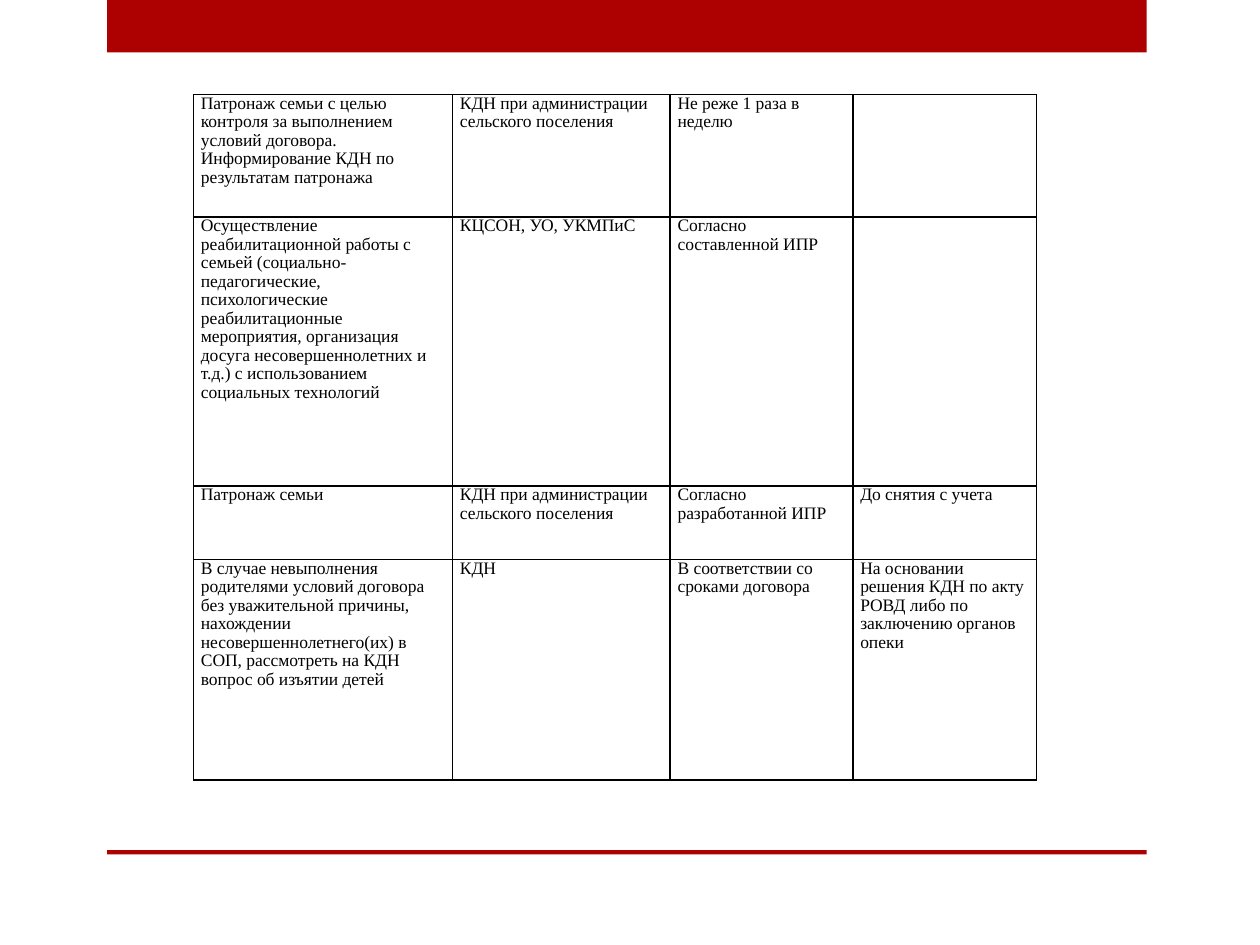
"""Build a slide with a family support plan table between two red bars."""
from lxml import etree
from pptx import Presentation
from pptx.dml.color import RGBColor
from pptx.enum import shapes, text
from pptx.oxml import ns
from pptx.util import Pt


def tint(code):
    """Turn a hex string into a colour."""
    return RGBColor.from_string(code)


def write(frame, words, font="Times New Roman", size=10, color="000000", pitch=0.96):
    """Put formatted text in a frame."""
    para = frame.paragraphs[0]
    para.alignment = text.PP_ALIGN.LEFT
    para.line_spacing = pitch
    run = para.add_run()
    run.text = words
    run.font.name = font
    run.font.size = Pt(size)
    run.font.color.rgb = tint(color)


deck = Presentation()
deck.slide_width, deck.slide_height = Pt(720), Pt(540)
slide = deck.slides.add_slide(deck.slide_layouts[6])

for top, high in [(0, 30), (485.8, 2.4)]:
    bar = slide.shapes.add_shape(
        shapes.MSO_SHAPE.RECTANGLE, Pt(61.2), Pt(top), Pt(594), Pt(high))
    bar.shadow.inherit = False
    bar.fill.solid()
    bar.fill.fore_color.rgb = tint("AD0101")
    bar.line.fill.background()

plan = [
    ["Патронаж семьи с целью контроля за выполнением условий договора. "
     "Информирование КДН по результатам патронажа",
     "КДН при администрации сельского поселения",
     "Не реже 1 раза в неделю", ""],
    ["Осуществление реабилитационной работы с семьей (социально-педагогические, "
     "психологические реабилитационные мероприятия, организация досуга "
     "несовершеннолетних и т.д.) с использованием социальных технологий",
     "КЦСОН, УО, УКМПиС",
     "Согласно составленной ИПР", ""],
    ["Патронаж семьи",
     "КДН при администрации сельского поселения",
     "Согласно разработанной ИПР",
     "До снятия с учета"],
    ["В случае невыполнения родителями условий договора без уважительной причины, "
     "нахождении несовершеннолетнего(их) в СОП, рассмотреть на КДН вопрос "
     "об изъятии детей",
     "КДН",
     "В соответствии со сроками договора",
     "На основании решения КДН по акту РОВД либо по заключению органов опеки"],
]
wides = [148, 124.4, 104.4, 105]
highs = [70, 153.8, 42, 126]

table = slide.shapes.add_table(
    len(highs), len(wides), Pt(110.6), Pt(54), Pt(sum(wides)), Pt(sum(highs))).table
table.first_row = table.horz_banding = False
for col, wide in zip(table.columns, wides):
    col.width = Pt(wide)

for row, high, line in zip(table.rows, highs, plan):
    row.height = Pt(high)
    for cell, words in zip(row.cells, line):
        cell.margin_left = cell.margin_right = Pt(4.2)
        cell.margin_top = cell.margin_bottom = 0
        if words:
            write(cell.text_frame, words)
        props = cell._tc.get_or_add_tcPr()
        for side in ["lnL", "lnR", "lnT", "lnB"]:
            edge = etree.SubElement(props, ns.qn(f"a:{side}"), w=str(Pt(1)))
            fill = etree.SubElement(edge, ns.qn("a:solidFill"))
            etree.SubElement(fill, ns.qn("a:srgbClr"), val="000000")
        cell.fill.background()

deck.save("out.pptx")
